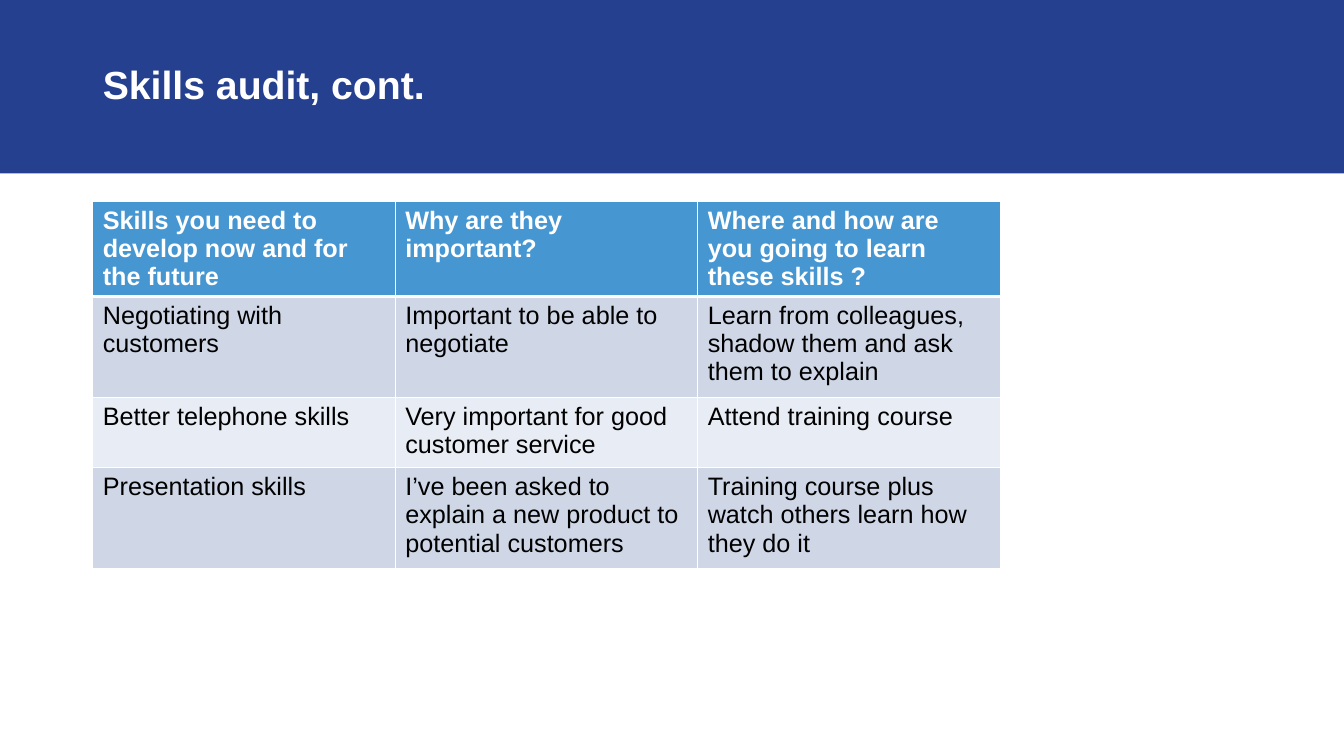
from dataclasses import dataclass

from lxml.etree import SubElement
from pptx import Presentation
from pptx.dml.color import RGBColor
from pptx.enum.shapes import MSO_SHAPE
from pptx.enum.text import MSO_ANCHOR, MSO_AUTO_SIZE, PP_ALIGN
from pptx.oxml.ns import qn
from pptx.table import _Cell as Cell
from pptx.text.text import _Paragraph as Paragraph
from pptx.util import Inches, Pt

FONT = "Arial"
WHITE = "FFFFFF"
BLACK = "000000"
BAND_BLUE = "25408F"
HEADER_BLUE = "4696D2"
DARK_STRIPE = "CFD7E7"
LIGHT_STRIPE = "E8ECF4"
LEFT_MARGIN = 0.92
COLUMN_WIDTH = 3


@dataclass
class SkillRow:
    texts: tuple[str, str, str]
    height: float
    fill: str
    color: str = BLACK
    bold: bool = False
    bottom_border: float = 1
    top_border: float = 1


SKILL_ROWS = [
    SkillRow(
        ("Skills you need to develop now and for the future",
         "Why are they important?",
         "Where and how are you going to learn these skills ?"),
        0.7, HEADER_BLUE, WHITE, bold=True, bottom_border=3),
    SkillRow(
        ("Negotiating with customers",
         "Important to be able to negotiate",
         "Learn from colleagues, shadow them and ask them to explain"),
        1, DARK_STRIPE, top_border=3),
    SkillRow(
        ("Better telephone skills",
         "Very important for good customer service",
         "Attend training course"),
        0.7, LIGHT_STRIPE),
    SkillRow(
        ("Presentation skills",
         "I’ve been asked to explain a new product to potential customers",
         "Training course plus watch others learn how they do it"),
        1, DARK_STRIPE),
]


def rgb(value: str) -> RGBColor:
    return RGBColor.from_string(value)


def add_run(paragraph: Paragraph, text: str, size: float, color: str, bold: bool) -> None:
    paragraph.alignment = PP_ALIGN.LEFT
    run = paragraph.add_run()
    run.text = text
    run.font.name = FONT
    run.font.size = Pt(size)
    run.font.bold = bold
    run.font.color.rgb = rgb(color)


def add_borders(cell: Cell, top: float, bottom: float) -> None:
    properties = cell._tc.get_or_add_tcPr()
    for side, width in (("L", 1), ("R", 1), ("T", top), ("B", bottom)):
        line = SubElement(properties, qn(f"a:ln{side}"), w=str(Pt(width)))
        fill = SubElement(line, qn("a:solidFill"))
        SubElement(fill, qn("a:srgbClr"), val=WHITE)


def fill_cell(cell: Cell, text: str, row: SkillRow) -> None:
    add_borders(cell, row.top_border, row.bottom_border)
    cell.fill.solid()
    cell.fill.fore_color.rgb = rgb(row.fill)
    cell.margin_left = cell.margin_right = Inches(0.1)
    cell.margin_top = cell.margin_bottom = Inches(0.05)
    add_run(cell.text_frame.paragraphs[0], text, 18, row.color, row.bold)


def main() -> None:
    presentation = Presentation()
    presentation.slide_width = Inches(13.33)
    presentation.slide_height = Inches(7.5)
    slide = presentation.slides.add_slide(presentation.slide_layouts.get_by_name("Title Only"))

    # Title
    title = slide.shapes.title
    title.left, title.top = Inches(LEFT_MARGIN), Inches(0.14)
    title.width, title.height = Inches(11.5), Inches(1.45)
    frame = title.text_frame
    frame.word_wrap = True
    frame.auto_size = MSO_AUTO_SIZE.NONE
    frame.vertical_anchor = MSO_ANCHOR.MIDDLE
    frame.paragraphs[0].line_spacing = 0.9
    add_run(frame.paragraphs[0], "Skills audit, cont.", 28, WHITE, True)

    # Blue band behind the title
    band = slide.shapes.add_shape(
        MSO_SHAPE.RECTANGLE, 0, 0, presentation.slide_width, Inches(1.72))
    band.shadow.inherit = False
    band.fill.solid()
    band.fill.fore_color.rgb = rgb(BAND_BLUE)
    band.line.fill.background()
    title.element.addprevious(band.element)

    # Skills table
    column_count = len(SKILL_ROWS[0].texts)
    table = slide.shapes.add_table(
        len(SKILL_ROWS), column_count, Inches(LEFT_MARGIN), Inches(2),
        Inches(COLUMN_WIDTH * column_count),
        Inches(sum(row.height for row in SKILL_ROWS))).table
    for column in table.columns:
        column.width = Inches(COLUMN_WIDTH)
    for table_row, row in zip(table.rows, SKILL_ROWS):
        table_row.height = Inches(row.height)
        for cell, text in zip(table_row.cells, row.texts):
            fill_cell(cell, text, row)

    presentation.save("out.pptx")


if __name__ == "__main__":
    main()
